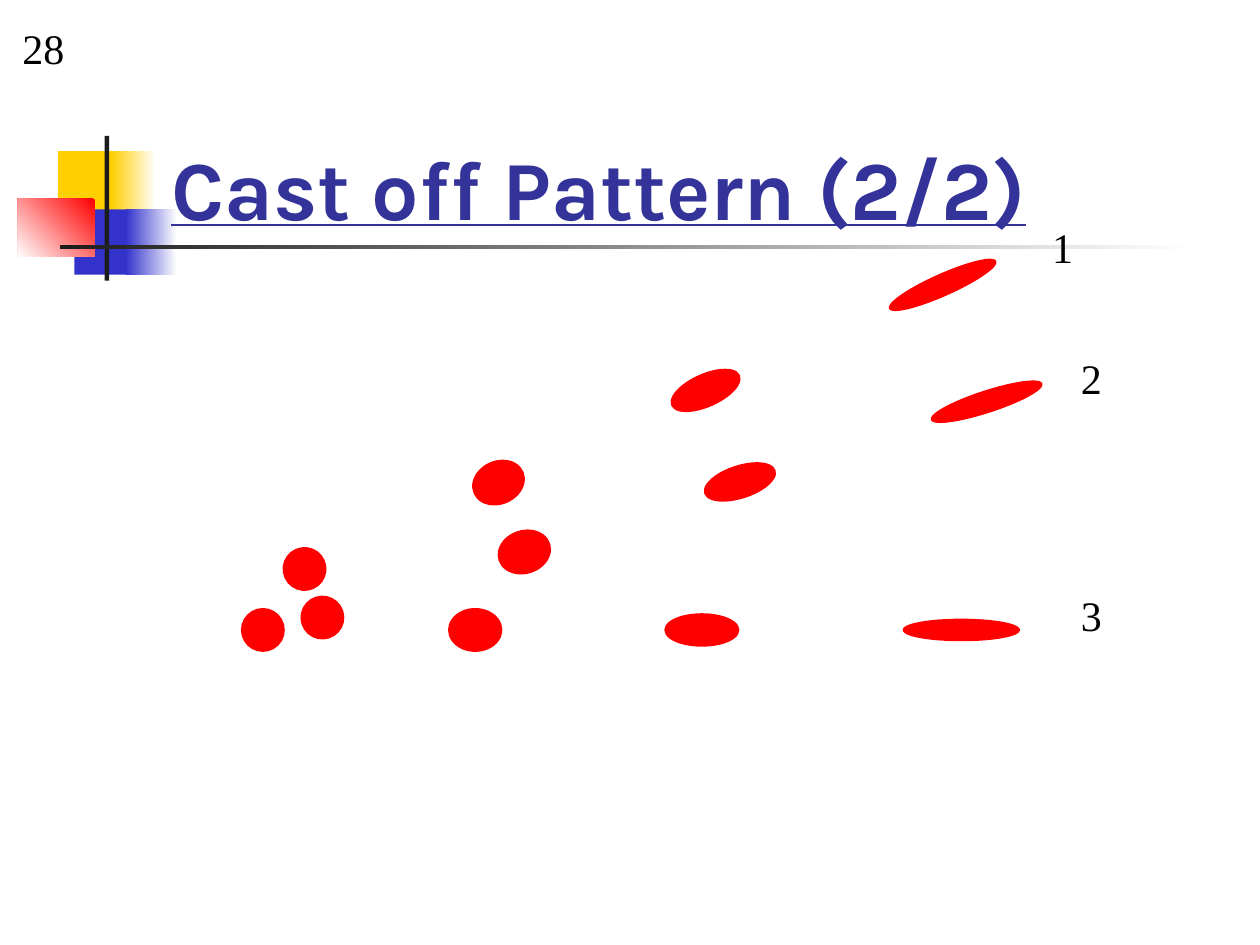
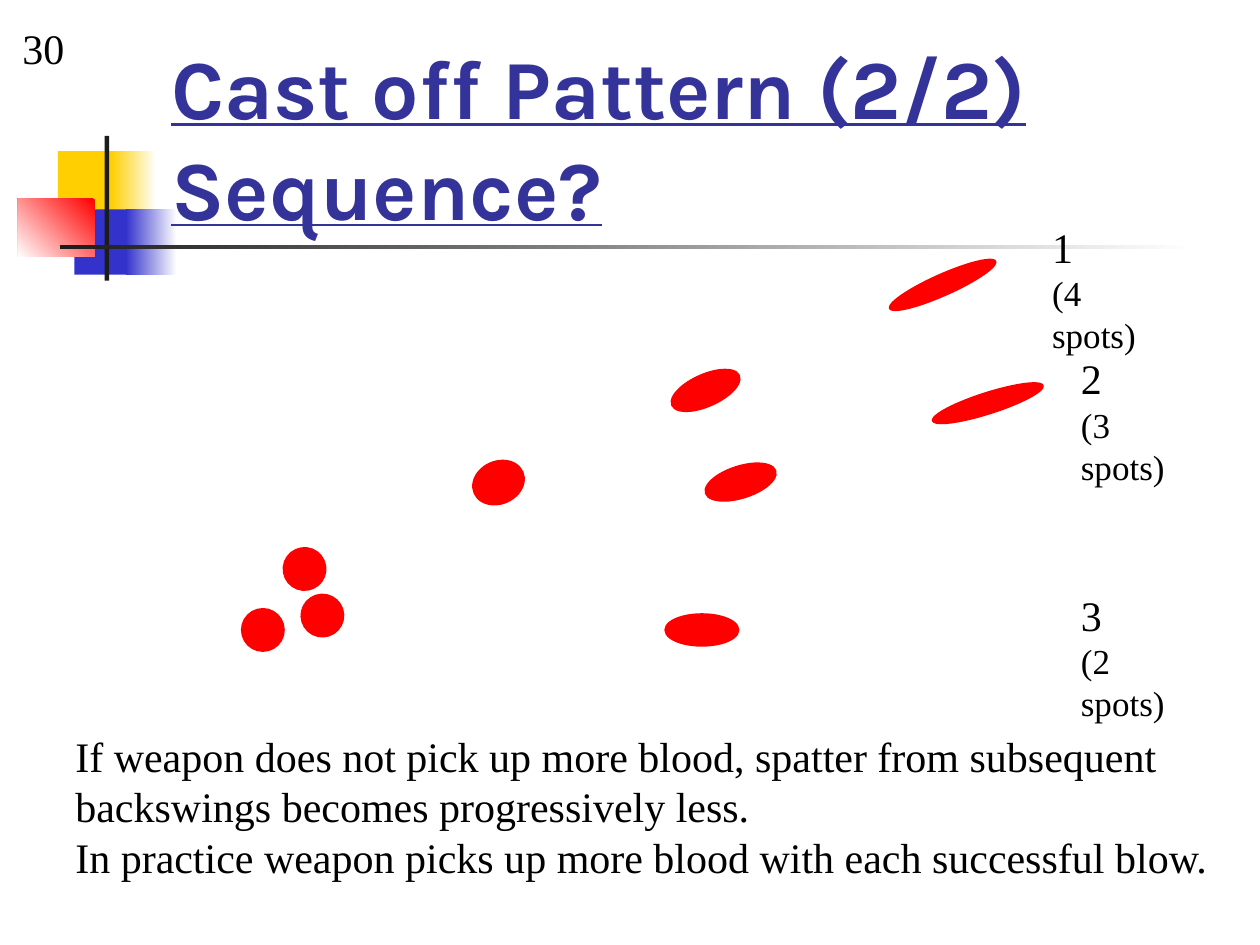
from dataclasses import dataclass
from math import cos, radians, sin

from pptx import Presentation
from pptx.dml.color import RGBColor
from pptx.enum.shapes import MSO_SHAPE as Preset
from pptx.enum.text import MSO_ANCHOR as Anchor
from pptx.slide import Slide
from pptx.util import Cm, Pt

COLOURS = {
    "gold": "FFCF01",
    "blue": "3333CC",
    "blood": "FF0000",
    "ink": "1C1C1C",
    "title": "333399",
    "text": "000000",
    "white": "FFFFFF",
}
BODY_FONT = "Times New Roman"
TITLE_FONT = "Karla"


@dataclass(frozen=True)
class Box:
    left: float
    top: float
    width: float
    height: float

    def lengths(self) -> tuple[Cm, Cm, Cm, Cm]:
        return Cm(self.left), Cm(self.top), Cm(self.width), Cm(self.height)


@dataclass(frozen=True)
class Band:
    box: Box
    start: str
    end: str | None = None
    angle: float = 180


@dataclass(frozen=True)
class Stain:
    distance: float
    width: float
    height: float


@dataclass(frozen=True)
class Swing:
    start_x: float
    start_y: float
    climb: float
    stains: tuple[int, ...] = (0, 1, 2, 3)


@dataclass(frozen=True)
class Label:
    left: float
    top: float
    lines: tuple[str, ...]


@dataclass(frozen=True)
class Page:
    number: str
    title: str
    swings: tuple[Swing, ...]
    spot_counts: tuple[str, ...] = ()
    conclusions: tuple[str, ...] = ()


BANDS = (
    Band(Box(1.17, 3.05, 1.22, 1.32), "gold"),
    Band(Box(2.24, 3.05, 0.91, 1.32), "white", "gold"),
    Band(Box(1.5, 4.22, 1.17, 1.32), "blue"),
    Band(Box(2.54, 4.22, 1.02, 1.32), "white", "blue"),
    Band(Box(0.36, 4.01, 1.55, 1.17), "blood", "white", 225),
    Band(Box(2.11, 2.74, 0.09, 2.92), "ink"),
    Band(Box(1.22, 4.94, 22.86, 0.09), "white", "ink"),
)
STAINS = (
    Stain(0, 0.85, 0.85),
    Stain(4.28, 1.06, 0.85),
    Stain(8.85, 1.48, 0.64),
    Stain(14.08, 2.33, 0.42),
)
TITLE_BOX = Box(3.2, 1.73, 21.64, 3.17)
NUMBER_BOX = Box(0.2, 0.33, 1.4, 1.27)
CONCLUSION_BOX = Box(1.27, 14.6, 23.7, 4.32)
SWING_LABELS = ((20.96, 4.34), (21.54, 6.99), (21.54, 11.76))

PAGES = (
    Page(
        "28",
        "Cast off Pattern (2/2)",
        (Swing(5.3, 12.7, 0), Swing(6.14, 11.47, 24), Swing(6.5, 12.45, 18)),
    ),
    Page(
        "30",
        "Cast off Pattern (2/2) Sequence?",
        (
            Swing(5.3, 12.7, 0, (0, 2)),
            Swing(6.14, 11.47, 24),
            Swing(6.5, 12.41, 17.7, (0, 2, 3)),
        ),
        ("(4 spots)", "(3 spots)", "(2 spots)"),
        (
            "If weapon does not pick up more blood, spatter from subsequent "
            "backswings becomes progressively less.",
            "In practice weapon picks up more blood with each successful blow.",
        ),
    ),
)


def colour(name: str) -> RGBColor:
    return RGBColor.from_string(COLOURS[name])


def draw_band(slide: Slide, band: Band) -> None:
    block = slide.shapes.add_shape(Preset.RECTANGLE, *band.box.lengths())
    block.shadow.inherit = False
    block.line.fill.background()
    if band.end is None:
        block.fill.solid()
        block.fill.fore_color.rgb = colour(band.start)
        return
    block.fill.gradient()
    block.fill.gradient_angle = band.angle
    for stop, position, name in zip(
        block.fill.gradient_stops, (0, 1), (band.start, band.end)
    ):
        stop.position = position
        stop.color.rgb = colour(name)


def draw_swing(slide: Slide, swing: Swing) -> None:
    climb = radians(swing.climb)
    for stain in (STAINS[index] for index in swing.stains):
        centre_x = swing.start_x + stain.distance * cos(climb)
        centre_y = swing.start_y - stain.distance * sin(climb)
        box = Box(
            centre_x - stain.width / 2,
            centre_y - stain.height / 2,
            stain.width,
            stain.height,
        )
        drop = slide.shapes.add_shape(Preset.OVAL, *box.lengths())
        drop.rotation = -swing.climb
        drop.shadow.inherit = False
        drop.fill.solid()
        drop.fill.fore_color.rgb = colour("blood")
        drop.line.color.rgb = colour("blood")
        drop.line.width = Pt(1)


def write(
    slide: Slide,
    box: Box,
    lines: tuple[str, ...],
    sizes: tuple[int, ...] = (24, 24),
    is_title: bool = False,
) -> None:
    frame = slide.shapes.add_textbox(*box.lengths()).text_frame
    frame.word_wrap = True
    frame.vertical_anchor = Anchor.BOTTOM if is_title else Anchor.TOP
    frame.text = "\n".join(lines)
    for paragraph, size in zip(frame.paragraphs, sizes):
        for run in paragraph.runs:
            run.font.name = TITLE_FONT if is_title else BODY_FONT
            run.font.size = Pt(size)
            run.font.bold = is_title
            run.font.underline = is_title
            run.font.color.rgb = colour("title" if is_title else "text")


def swing_labels(page: Page) -> list[Label]:
    labels = []
    for index, (left, top) in enumerate(SWING_LABELS):
        lines = (str(index + 1), *page.spot_counts[index:index + 1])
        labels.append(Label(left, top, lines))
    return labels


def draw_page(slide: Slide, page: Page) -> None:
    for band in BANDS:
        draw_band(slide, band)
    write(slide, TITLE_BOX, (page.title,), (48,), is_title=True)
    for swing in page.swings:
        draw_swing(slide, swing)
    width, height = (2.95, 2.11) if page.spot_counts else (1, 1.27)
    for label in swing_labels(page):
        write(slide, Box(label.left, label.top, width, height), label.lines, (24, 20))
    if page.conclusions:
        write(slide, CONCLUSION_BOX, page.conclusions)
    write(slide, NUMBER_BOX, (page.number,))


def main() -> None:
    deck = Presentation()
    deck.slide_width, deck.slide_height = Cm(25.4), Cm(19.05)
    blank = deck.slide_layouts[6]
    for page in PAGES:
        draw_page(deck.slides.add_slide(blank), page)
    deck.save("out.pptx")


if __name__ == "__main__":
    main()
